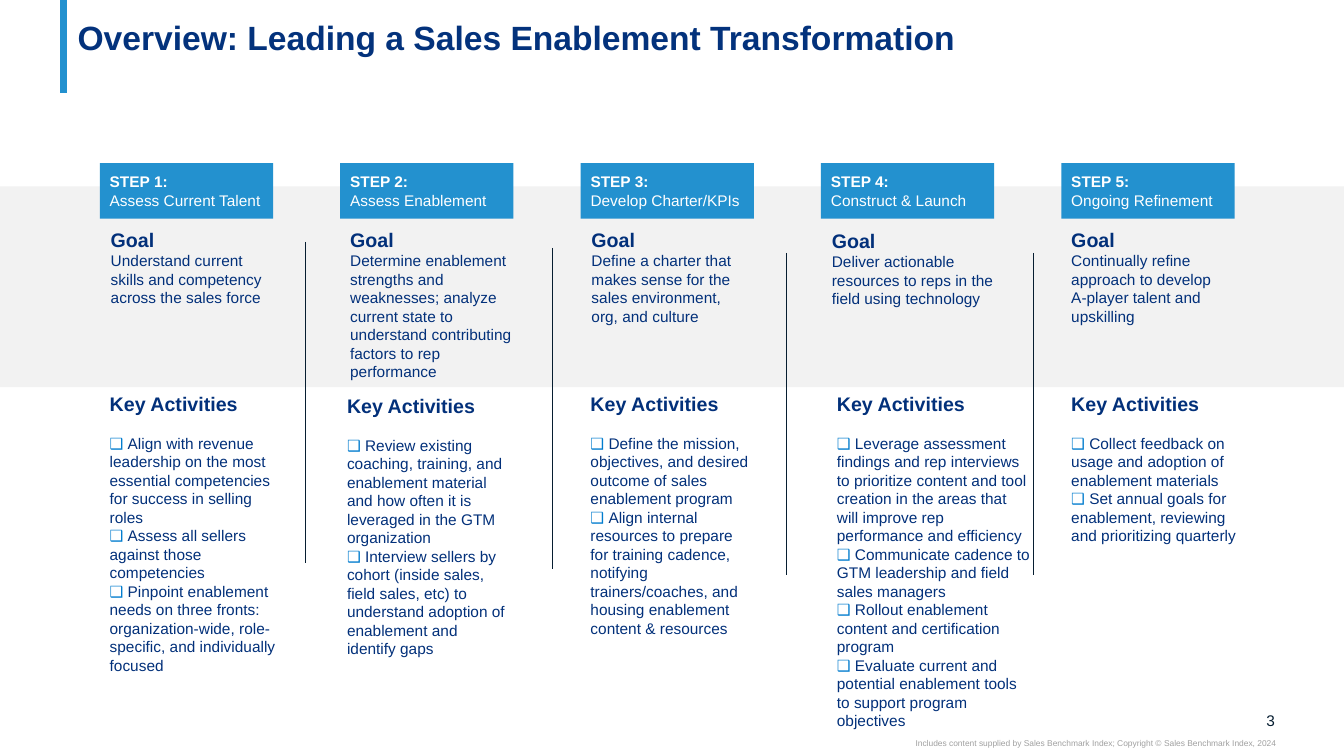
from dataclasses import dataclass

from lxml import etree
from pptx import Presentation
from pptx.dml.color import RGBColor
from pptx.enum import shapes, text
from pptx.oxml import ns
from pptx.util import Pt

WHITE = RGBColor(0xFF, 0xFF, 0xFF)
BAND = RGBColor(0xF2, 0xF2, 0xF2)
BLUE = RGBColor(0x23, 0x91, 0xCF)
BOX_BLUE = RGBColor(0x00, 0x7C, 0xCE)
TITLE_NAVY = RGBColor(0x03, 0x32, 0x7C)
NAVY = RGBColor(0x02, 0x30, 0x7A)
INK = RGBColor(0x07, 0x1E, 0x31)
GREY = RGBColor(0xA0, 0xA0, 0xA0)

SLIDE_WIDTH, SLIDE_HEIGHT = 960, 540
COLUMN_LEFT, COLUMN_PITCH, COLUMN_WIDTH = 71.3, 171.7, 123.8
STEP_TOP, STEP_HEIGHT = 116.6, 39.6
SEPARATORS = [(218.2, 172.8), (394.6, 177.1), (561.6, 180.7), (738, 180.7)]
SEPARATOR_HEIGHT = 229.7
CHECKBOX = "❑ "


@dataclass
class Step:
    name: str
    goal: str
    goal_box: tuple
    activities: list
    activity_box: tuple


STEPS = [
    Step("Assess Current Talent",
         "Understand current skills and competency across the sales force",
         (0.7, 159.1, 123.8, 80),
         [CHECKBOX + "Align with revenue leadership on the most essential "
          "competencies for success in selling roles",
          CHECKBOX + "Assess all sellers against those competencies",
          CHECKBOX + "Pinpoint enablement needs on three fronts:",
          "organization-wide, role-specific, and individually focused"],
         (0, 276.5, 139.7, 211)),
    Step("Assess Enablement",
         "Determine enablement strengths and weaknesses; analyze current state "
         "to understand contributing factors to rep performance",
         (0, 159.1, 130.3, 117.4),
         [CHECKBOX + "Review existing coaching, training, and enablement material "
          "and how often it is leveraged in the GTM organization",
          CHECKBOX + "Interview sellers by cohort (inside sales, field sales, etc) "
          "to understand adoption of enablement and identify gaps"],
         (-2.2, 277.9, 127.4, 197.3)),
    Step("Develop Charter/KPIs",
         "Define a charter that makes sense for the sales environment, "
         "org, and culture",
         (0.7, 159.1, 123.8, 77.8),
         [CHECKBOX + "Define the mission, objectives, and desired outcome of sales "
          "enablement program",
          CHECKBOX + "Align internal resources to prepare for training cadence, "
          "notifying trainers/coaches, and housing enablement content & resources"],
         (0, 276.5, 129.6, 197.3)),
    Step("Construct & Launch",
         "Deliver actionable resources to reps in the field using technology",
         (0.7, 159.8, 149, 64),
         [CHECKBOX + "Leverage assessment findings and rep interviews to prioritize "
          "content and tool creation in the areas that will improve rep "
          "performance and efficiency",
          CHECKBOX + "Communicate cadence to GTM leadership and field sales managers",
          CHECKBOX + "Rollout enablement content and certification program",
          CHECKBOX + "Evaluate current and potential enablement tools to support "
          "program objectives"],
         (4.3, 276.5, 153.4, 250.6)),
    Step("Ongoing Refinement",
         "Continually refine approach to develop A-player talent and\vupskilling",
         (0, 159.1, 123.8, 77.8),
         [CHECKBOX + "Collect feedback on usage and adoption of enablement materials",
          CHECKBOX + "Set annual goals for enablement, reviewing and prioritizing "
          "quarterly"],
         (0, 276.5, 133.9, 133.2)),
]


def set_font(paragraph, size, color, bold=False):
    font = paragraph.font
    font.name, font.size, font.bold = "Arial", Pt(size), bold
    font.color.rgb = color


def fill_paragraphs(frame, lines):
    for index, (line, size, color, bold) in enumerate(lines):
        paragraph = frame.add_paragraph() if index else frame.paragraphs[0]
        paragraph.alignment = text.PP_ALIGN.LEFT
        if line.startswith(CHECKBOX):
            checkbox = paragraph.add_run()
            checkbox.text = CHECKBOX
            checkbox.font.color.rgb = BOX_BLUE
            paragraph.add_run().text = line[len(CHECKBOX):]
        else:
            paragraph.text = line
        set_font(paragraph, size, color, bold)


def add_rectangle(slide, box, color):
    shape = slide.shapes.add_shape(shapes.MSO_SHAPE.RECTANGLE, *map(Pt, box))
    shape.shadow.inherit = False
    shape.fill.solid()
    shape.fill.fore_color.rgb = color
    shape.line.fill.background()
    return shape


def add_vertical_line(slide, left, top, height, color, width):
    line = slide.shapes.add_connector(
        shapes.MSO_CONNECTOR.STRAIGHT, Pt(left), Pt(top), Pt(left), Pt(top + height))
    line.line.color.rgb = color
    line.line.width = Pt(width)
    etree.SubElement(line._element.spPr, ns.qn("a:effectLst"))


def add_text_block(slide, box, lines):
    frame = slide.shapes.add_textbox(*map(Pt, box)).text_frame
    frame.word_wrap = True
    fill_paragraphs(frame, lines)
    return frame


def add_title(slide, box):
    title = slide.shapes.title
    title.left, title.top, title.width, title.height = map(Pt, box)
    frame = title.text_frame
    frame.auto_size = text.MSO_AUTO_SIZE.NONE
    frame.vertical_anchor = text.MSO_ANCHOR.BOTTOM
    frame.margin_top = frame.margin_bottom = 0
    fill_paragraphs(frame, [("Overview: Leading a Sales Enablement Transformation",
                             24, TITLE_NAVY, True)])
    frame.paragraphs[0].line_spacing = 0.9


def add_footer_text(slide, box, line, size, color):
    frame = add_text_block(slide, box, [(line, size, color, False)])
    frame.margin_left = frame.margin_right = frame.margin_top = frame.margin_bottom = 0
    frame.paragraphs[0].alignment = text.PP_ALIGN.RIGHT
    return frame


def add_step(slide, left, number, step):
    header = add_rectangle(slide, (left, STEP_TOP, COLUMN_WIDTH, STEP_HEIGHT), BLUE)
    header.text_frame.vertical_anchor = text.MSO_ANCHOR.MIDDLE
    fill_paragraphs(header.text_frame, [(f"STEP {number}:", 11, WHITE, True),
                                        (step.name, 11, WHITE, False)])
    offset, *rest = step.goal_box
    add_text_block(slide, (left + offset, *rest),
                   [("Goal", 14, NAVY, True), (step.goal, 11, NAVY, False)])
    offset, *rest = step.activity_box
    activities = [(line, 11, NAVY, False) for line in step.activities]
    frame = add_text_block(slide, (left + offset, *rest),
                           [("Key Activities", 14, NAVY, True), *activities])
    frame.paragraphs[1].space_before = Pt(13)


def main():
    presentation = Presentation()
    presentation.slide_width = Pt(SLIDE_WIDTH)
    presentation.slide_height = Pt(SLIDE_HEIGHT)
    slide = presentation.slides.add_slide(presentation.slide_layouts[5])

    add_vertical_line(slide, 45.4, 0, 66.2, BLUE, 5)
    number = add_footer_text(slide, (887, 507.6, 23.8, 13.7), "3", 11, INK)
    number.vertical_anchor = text.MSO_ANCHOR.MIDDLE
    add_footer_text(slide, (540, 527, 371.5, 7.2),
                    "Includes content supplied by Sales Benchmark Index; "
                    "Copyright © Sales Benchmark Index, 2024", 6, GREY)
    add_rectangle(slide, (0, 133.2, SLIDE_WIDTH, 143.3), BAND)
    add_title(slide, (48.2, -19.4, 863.3, 60.5))
    for index, step in enumerate(STEPS):
        add_step(slide, COLUMN_LEFT + index * COLUMN_PITCH, index + 1, step)
    for left, top in SEPARATORS:
        add_vertical_line(slide, left, top, SEPARATOR_HEIGHT, INK, 0.5)

    presentation.save("out.pptx")


if __name__ == "__main__":
    main()
